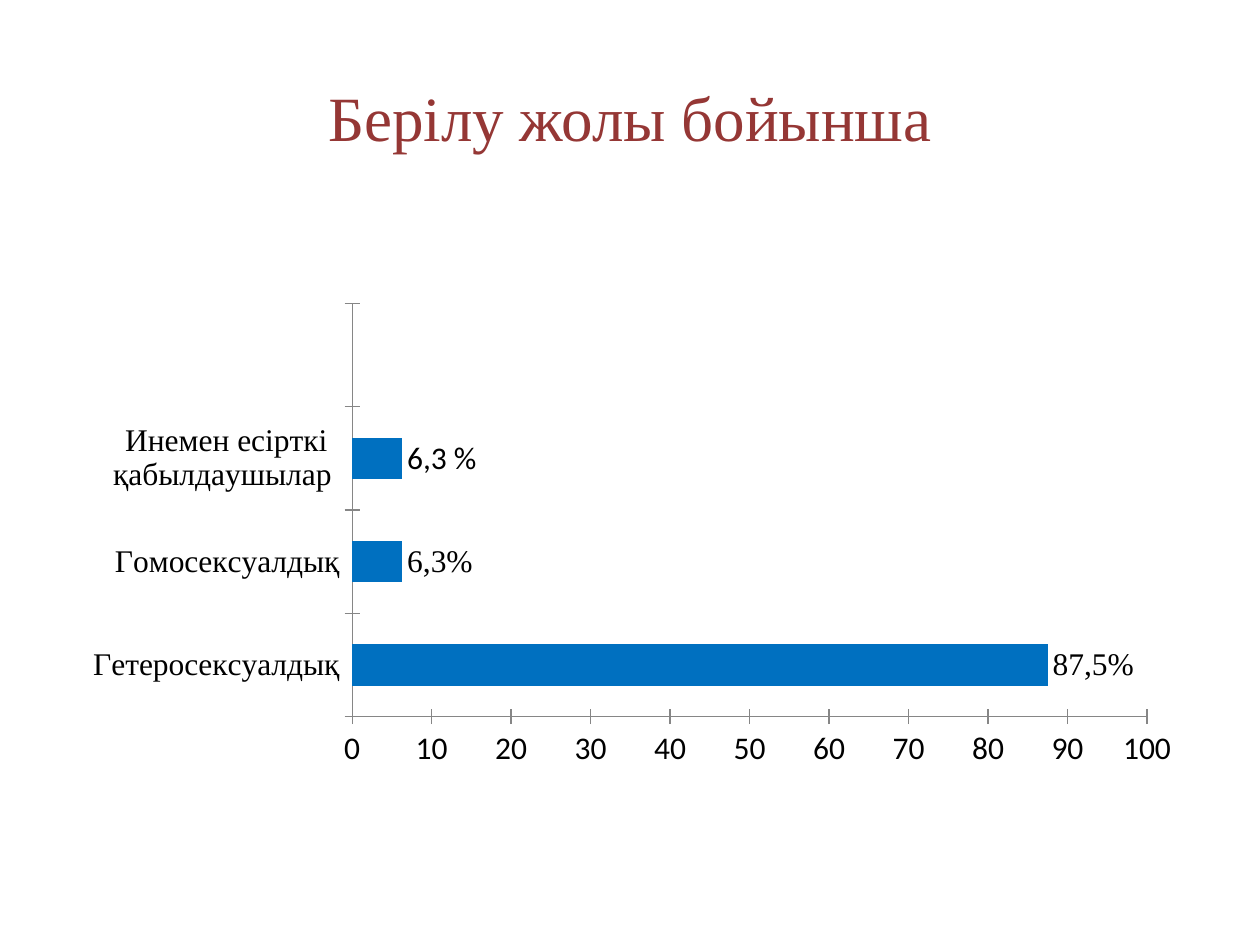
from dataclasses import dataclass

from lxml import etree
from pptx import Presentation
from pptx import util as u
from pptx.chart import data as chart_data
from pptx.dml.color import RGBColor
from pptx.enum import chart as ce
from pptx.enum import text
from pptx.oxml.ns import qn


@dataclass(frozen=True)
class Theme:
    """Colours, fonts and type sizes of the slide."""
    title: RGBColor = RGBColor.from_string("953735")
    bar: RGBColor = RGBColor.from_string("0070C0")
    ink: RGBColor = RGBColor.from_string("000000")
    axis: RGBColor = RGBColor.from_string("868686")
    serif: str = "Times New Roman"
    sans: str = "Calibri"
    title_size: int = 36
    chart_size: int = 18


THEME = Theme()
CATEGORIES = ["Гетеросексуалдық", "Гомосексуалдық", "Инемен есірткі қабылдаушылар ", ""]
VALUES = [87.5, 6.3, 6.3, None]
LABELS = [("87,5%", THEME.serif), ("6,3%", THEME.serif), ("6,3 %", THEME.sans)]


def set_font(font, name, size, color):
    """Give a font its face, size and colour."""
    font.name = name
    font.size = u.Pt(size)
    font.color.rgb = color


def add_title(slide, title):
    """Place and format the title."""
    shape = slide.shapes.title
    shape.left, shape.top = u.Inches(0.5), u.Inches(0.3)
    shape.width, shape.height = u.Inches(9), u.Inches(1.25)
    frame = shape.text_frame
    frame.text = title
    frame.vertical_anchor = text.MSO_ANCHOR.MIDDLE
    paragraph = frame.paragraphs[0]
    paragraph.alignment = text.PP_ALIGN.CENTER
    set_font(paragraph.runs[0].font, THEME.serif, THEME.title_size, THEME.title)


def set_plot_layout(chart, x, y, w, h):
    """Fix the inner plot area as fractions of the chart."""
    plot_area = chart.element.find(".//" + qn("c:plotArea"))
    for old in plot_area.findall(qn("c:layout")):
        plot_area.remove(old)
    layout = etree.Element(qn("c:layout"))
    plot_area.insert(0, layout)
    manual = etree.SubElement(layout, qn("c:manualLayout"))
    settings = {"layoutTarget": "inner", "xMode": "edge", "yMode": "edge",
                "x": x, "y": y, "w": w, "h": h}
    for tag, value in settings.items():
        etree.SubElement(manual, qn(f"c:{tag}")).set("val", str(value))


def format_axis(axis, font_name):
    """Give an axis its line, ticks and font, without gridlines."""
    axis.has_major_gridlines = False
    axis.major_tick_mark = ce.XL_TICK_MARK.CROSS
    axis.minor_tick_mark = ce.XL_TICK_MARK.NONE
    axis.format.line.color.rgb = THEME.axis
    axis.format.line.width = u.Pt(0.75)
    set_font(axis.tick_labels.font, font_name, THEME.chart_size, THEME.ink)


def add_point_label(point, label, font_name):
    """Write a label at the end of a bar."""
    data_label = point.data_label
    data_label.text_frame.text = label
    run = data_label.text_frame.paragraphs[0].runs[0]
    set_font(run.font, font_name, THEME.chart_size, THEME.ink)
    data_label.position = ce.XL_LABEL_POSITION.OUTSIDE_END


def add_bar_chart(slide):
    """Add the chart of transmission routes."""
    data = chart_data.CategoryChartData()
    data.categories = CATEGORIES
    data.add_series("Series 1", VALUES)
    chart = slide.shapes.add_chart(
        ce.XL_CHART_TYPE.BAR_CLUSTERED, u.Inches(0.5), u.Inches(1.75),
        u.Inches(9), u.Inches(4.95), data).chart
    chart.has_legend = False
    chart.has_title = False
    set_font(chart.font, THEME.sans, THEME.chart_size, THEME.ink)
    set_plot_layout(chart, 0.255, 0.133, 0.701, 0.663)
    format_axis(chart.category_axis, THEME.serif)
    format_axis(chart.value_axis, THEME.sans)
    chart.value_axis.minimum_scale = 0
    chart.value_axis.maximum_scale = 100
    chart.value_axis.major_unit = 10

    plot = chart.plots[0]
    plot.gap_width = 150
    plot.vary_by_categories = False
    series = plot.series[0]
    series.format.fill.solid()
    series.format.fill.fore_color.rgb = THEME.bar
    series.data_labels.show_value = True
    for index, (label, font_name) in enumerate(LABELS):
        add_point_label(series.points[index], label, font_name)


def main():
    """Build and save the slide."""
    presentation = Presentation()
    presentation.slide_width, presentation.slide_height = u.Inches(10), u.Inches(7.5)
    slide = presentation.slides.add_slide(presentation.slide_layouts[5])
    add_title(slide, "Берілу жолы бойынша")
    add_bar_chart(slide)
    presentation.save("out.pptx")


if __name__ == "__main__":
    main()
